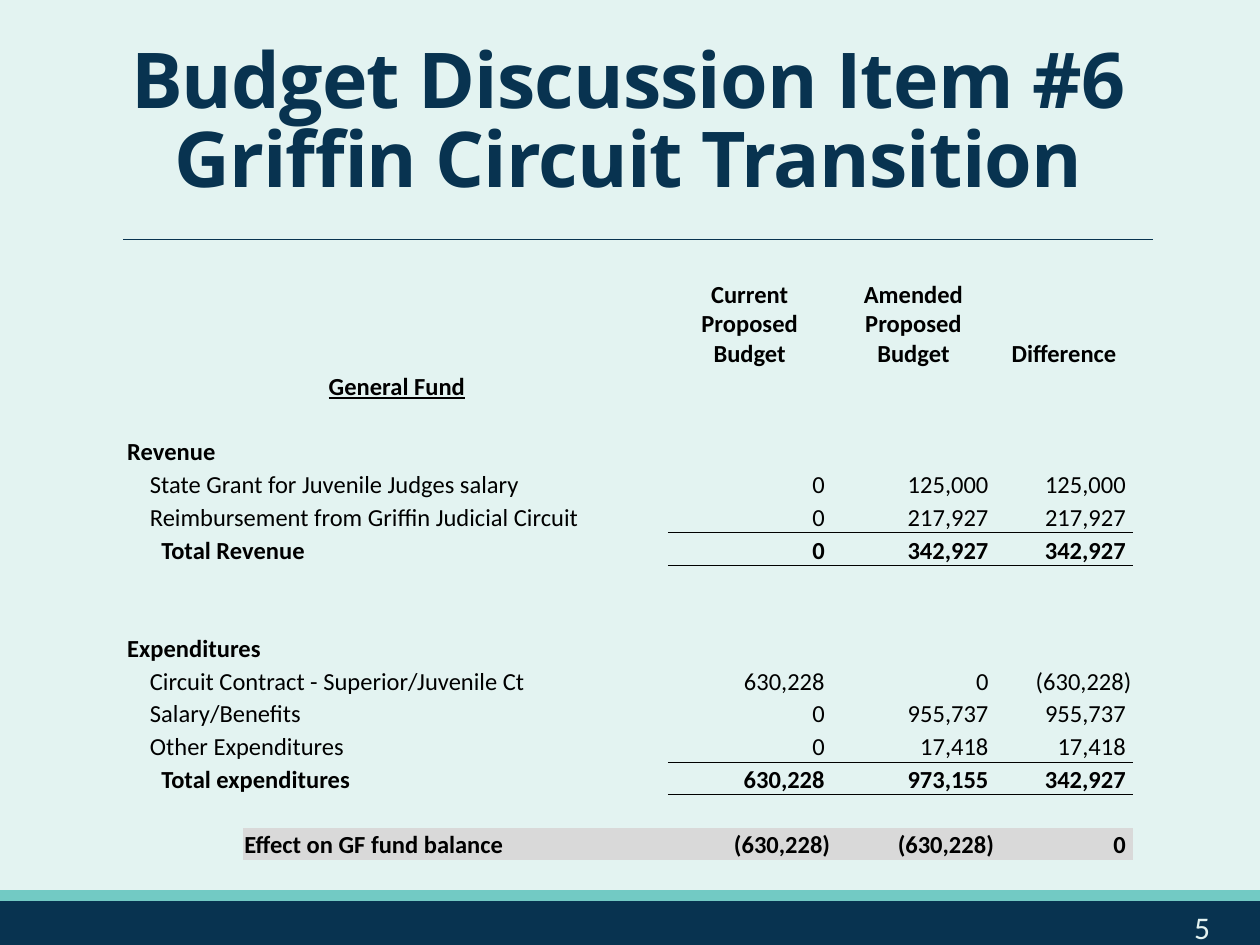
from lxml.etree import SubElement
from pptx import Presentation
from pptx.dml.color import RGBColor
from pptx.enum.shapes import MSO_CONNECTOR as Connector, MSO_SHAPE as Shape
from pptx.enum.text import MSO_ANCHOR as Anchor, MSO_AUTO_SIZE as AutoSize, PP_ALIGN as Align
from pptx.oxml import parse_xml
from pptx.oxml.ns import nsdecls, qn
from pptx.util import Inches, Pt

NAVY, TEAL, PALE, BLACK, GREY = "083350", "72CAC4", "E3F3F1", "000000", "D9D9D9"
NO_STYLE = "{2D5ABB26-0587-4C30-8999-92F81FD0307C}"
LABEL_COLUMNS = [0.93] * 4 + [0.58]
VALUE_COLUMNS = [1.3, 1.3, 1.09]
FIRST_VALUE = len(LABEL_COLUMNS)
HEADER_HEIGHT, ROW_HEIGHT = 0.76, 0.26
PLAIN, HEADING = {"bold": False}, {"bold": True}
INDENTS = {"heading": 0.01, "item": 0.19, "last": 0.19, "total": 0.28}

BUDGET_ROWS = [
    ("heading", "Revenue", 1, []),
    ("item", "State Grant for Juvenile Judges salary", 4, ["0 ", "125,000 ", "125,000 "]),
    ("last", "Reimbursement from Griffin Judicial Circuit", 5, ["0 ", "217,927 ", "217,927 "]),
    ("total", "Total Revenue", 2, ["0 ", "342,927 ", "342,927 "]),
    None,
    None,
    ("heading", "Expenditures", 2, []),
    ("item", "Circuit Contract - Superior/Juvenile Ct", 4, ["630,228 ", "0 ", "(630,228)"]),
    ("item", "Salary/Benefits", 2, ["0 ", "955,737 ", "955,737 "]),
    ("last", "Other Expenditures", 3, ["0 ", "17,418 ", "17,418 "]),
    ("total", "Total expenditures", 3, ["630,228 ", "973,155 ", "342,927 "]),
]


def color(value):
    return RGBColor.from_string(value)


def apply(target, values):
    for name, value in values.items():
        setattr(target, name, value)


class SlideBuilder:
    body_font = "Calibri"
    title_font = "Open Sans"

    def __init__(self, deck):
        self.page = deck.slides.add_slide(deck.slide_layouts[5])
        fill = self.page.background.fill
        fill.solid()
        fill.fore_color.rgb = color(PALE)

    def fill_para(self, para, text, size, ink, align, **font):
        para.alignment = align
        para.text = text
        for span in para.runs:
            apply(span.font, {"name": self.body_font, "size": Pt(size), **font})
            span.font.color.rgb = color(ink)

    def title(self, text, left, top, width, height):
        box = self.page.shapes.title
        apply(box, {"left": Inches(left), "top": Inches(top),
                    "width": Inches(width), "height": Inches(height)})
        frame = box.text_frame
        apply(frame, {"word_wrap": True, "auto_size": AutoSize.NONE,
                      "vertical_anchor": Anchor.BOTTOM})
        para = frame.paragraphs[0]
        self.fill_para(para, text, 44, NAVY, Align.CENTER, name=self.title_font, bold=True)
        para.line_spacing = 0.85
        for span in para.runs:
            span.font._element.set("spc", "-50")

    def bar(self, fill, left, top, width, height):
        box = self.page.shapes.add_shape(
            Shape.RECTANGLE, Inches(left), Inches(top), Inches(width), Inches(height))
        box.shadow.inherit = False
        box.fill.solid()
        box.fill.fore_color.rgb = color(fill)
        box.line.color.rgb = color(fill)
        box.line.width = Pt(1.25)

    def rule(self, left, right, top):
        line = self.page.shapes.add_connector(
            Connector.STRAIGHT, Inches(left), Inches(top), Inches(right), Inches(top))
        line.line.color.rgb = color(NAVY)
        line.line.width = Pt(0.5)
        SubElement(line._element.spPr, qn("a:effectLst"))

    def text(self, text, left, top, width, height):
        box = self.page.shapes.add_textbox(
            Inches(left), Inches(top), Inches(width), Inches(height))
        box.text_frame.word_wrap = True
        self.fill_para(box.text_frame.paragraphs[0], text, 18, PALE, Align.CENTER)

    def table(self, left, top, columns, rows):
        frame = self.page.shapes.add_table(
            len(rows), len(columns), Inches(left), Inches(top),
            Inches(sum(columns)), Inches(sum(rows)))
        grid = frame.table
        apply(grid, {"first_row": False, "horz_banding": False})
        grid._tbl.tblPr.find(qn("a:tableStyleId")).text = NO_STYLE
        for column, width in zip(grid.columns, columns):
            column.width = Inches(width)
        for row, height in zip(grid.rows, rows):
            row.height = Inches(height)
        for cell in grid.iter_cells():
            apply(cell, {"margin_left": Inches(0.01), "margin_right": Inches(0.01),
                         "margin_top": Inches(0.01), "margin_bottom": 0,
                         "vertical_anchor": Anchor.BOTTOM})
            cell.fill.background()
            SubElement(cell.text_frame.paragraphs[0]._p, qn("a:endParaRPr"), sz="1400")
        return grid

    def cell(self, cell, text, align, indent=0.01, **font):
        cell.margin_left = Inches(indent)
        self.fill_para(cell.text_frame.paragraphs[0], text, 14, BLACK, align, **font)

    def label(self, grid, row, column, text, span, align=Align.LEFT, **style):
        cell = grid.cell(row, column)
        if span > 1:
            cell.merge(grid.cell(row, column + span - 1))
        self.cell(cell, text, align, **style)

    def values(self, grid, row, texts, align=Align.RIGHT, **font):
        for column, text in enumerate(texts, FIRST_VALUE):
            self.cell(grid.cell(row, column), text, align, **font)

    def border(self, cell, side):
        cell._tc.get_or_add_tcPr().insert(0, parse_xml(
            f'<a:ln{side} {nsdecls("a")} w="6350"><a:solidFill>'
            f'<a:srgbClr val="{BLACK}"/></a:solidFill></a:ln{side}>'))


def add_budget(slide):
    first_row = 3
    effect_row = first_row + len(BUDGET_ROWS) + 1
    columns = LABEL_COLUMNS + VALUE_COLUMNS
    grid = slide.table(1, 2.17, columns, [HEADER_HEIGHT] + [ROW_HEIGHT] * effect_row)
    headers = ["Current Proposed Budget", "Amended Proposed Budget", "Difference"]
    slide.values(grid, 0, headers, Align.CENTER, **HEADING)
    slide.label(grid, 1, 0, "General Fund", FIRST_VALUE, Align.CENTER, underline=True, **HEADING)

    for row, entry in enumerate(BUDGET_ROWS, first_row):
        if entry is None:
            continue
        kind, text, span, amounts = entry
        font = PLAIN if kind in ("item", "last") else HEADING
        slide.label(grid, row, 0, text, span, indent=INDENTS[kind], **font)
        slide.values(grid, row, amounts, **font)
        side = {"last": "B", "total": "T"}.get(kind)
        if side:
            for column in range(FIRST_VALUE, len(columns)):
                slide.border(grid.cell(row, column), side)

    slide.label(grid, effect_row, 1, "Effect on GF fund balance", 3, **HEADING)
    slide.values(grid, effect_row, ["(630,228)", "(630,228)", "0 "], **HEADING)
    for column in range(1, len(columns)):
        fill = grid.cell(effect_row, column).fill
        fill.solid()
        fill.fore_color.rgb = color(GREY)


def main():
    deck = Presentation()
    apply(deck, {"slide_width": Inches(10), "slide_height": Inches(7.5)})
    slide = SlideBuilder(deck)
    slide.bar(NAVY, 0, 7.15, 10, 0.5)
    slide.bar(TEAL, 0, 7.07, 10, 0.07)
    slide.rule(0.98, 9.15, 1.9)
    slide.title("Budget Discussion Item #6\vGriffin Circuit Transition", 0, 0.83, 9.97, 0.83)
    slide.text("5", 9.08, 7.16, 0.92, 0.43)
    add_budget(slide)
    deck.save("out.pptx")


if __name__ == "__main__":
    main()
